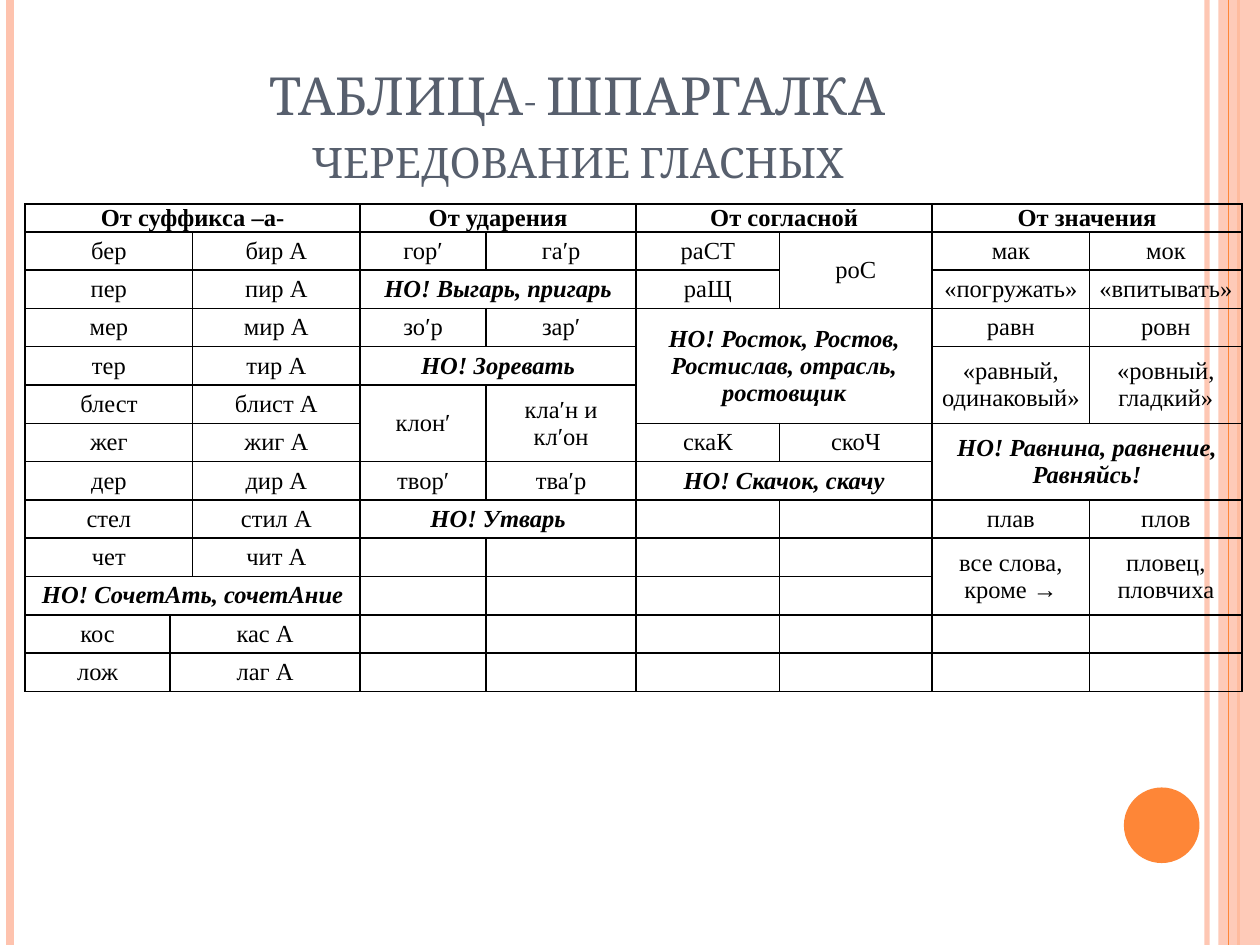
import copy

import pptx
import pptx.dml.color
import pptx.enum.shapes
import pptx.enum.text
import pptx.oxml
import pptx.oxml.ns
import pptx.util
from pptx.util import Inches

COLORS = {"peach": "FEC3AE", "orange": "FE8637", "slate": "575F6D", "black": "000000"}
SHAPES = pptx.enum.shapes.MSO_SHAPE
ANCHOR = pptx.enum.text.MSO_ANCHOR
CENTER = pptx.enum.text.PP_ALIGN.CENTER
qn = pptx.oxml.ns.qn

# "<" continues the cell on the left, "^" continues the cell above
LEFT, UP = "<", "^"
ALTERNATIONS = [
    ["От суффикса –а-", "<", "<", "От ударения", "<", "От согласной", "<", "От значения", "<"],
    ["бер", "<", "бир А", "гор′", "га′р", "раСТ", "роС", "мак", "мок"],
    ["пер", "<", "пир А", "НО! Выгарь, пригарь", "<", "раЩ", "^", "«погружать»", "«впитывать»"],
    ["мер", "<", "мир А", "зо′р", "зар′",
     "НО! Росток, Ростов, Ростислав, отрасль, ростовщик", "<", "равн", "ровн"],
    ["тер", "<", "тир А", "НО! Зоревать", "<", "^", "<",
     "«равный, одинаковый»", "«ровный, гладкий»"],
    ["блест", "<", "блист А", "клон′", "кла′н и кл′он", "^", "<", "^", "^"],
    ["жег", "<", "жиг А", "^", "^", "скаК", "скоЧ", "НО! Равнина, равнение, Равняйсь!", "<"],
    ["дер", "<", "дир А", "твор′", "тва′р", "НО! Скачок, скачу", "<", "^", "<"],
    ["стел", "<", "стил А", "НО! Утварь", "<", "", "", "плав", "плов"],
    ["чет", "<", "чит А", "", "", "", "", "все слова, кроме →", "пловец, пловчиха"],
    ["НО! СочетАть, сочетАние", "<", "<", "", "", "", "", "^", "^"],
    ["кос", "кас А", "<", "", "", "", "", "", ""],
    ["лож", "лаг А", "<", "", "", "", "", "", ""],
]
COLUMN_WIDTHS = [1.15, 0.14, 1.33, 1, 1.19, 1.14, 1.21, 1.25, 1.21]
HEADER_HEIGHT, TABLE_HEIGHT = 0.22, 3.87


def rgb(name):
    return pptx.dml.color.RGBColor.from_string(COLORS[name])


def set_opacity(shape, percent):
    for color in shape._element.spPr.iter(qn("a:srgbClr")):
        alpha = color.makeelement(qn("a:alpha"), {"val": str(percent * 1000)})
        color.append(alpha)


def span_length(cells, mark):
    """Count the first cell and the marks that follow it directly."""
    length = 1
    while length < len(cells) and cells[length] == mark:
        length += 1
    return length


class CheatSheet:
    heading_font, table_font = "Cambria", "Times New Roman"
    heading_size, table_size = 30, 14

    def __init__(self, presentation):
        self.slide = presentation.slides.add_slide(presentation.slide_layouts[5])

    def stripe(self, x, color, width, opacity=100):
        stripe = self.slide.shapes.add_connector(
            pptx.enum.shapes.MSO_CONNECTOR.STRAIGHT,
            Inches(x), Inches(0), Inches(x), Inches(7.5))
        stripe.line.color.rgb = rgb(color)
        stripe.line.width = pptx.util.Pt(width)
        spPr = stripe._element.spPr
        spPr.append(spPr.makeelement(qn("a:effectLst"), {}))
        if opacity < 100:
            set_opacity(stripe, opacity)

    def block(self, kind, x, y, width, height, color, opacity=100):
        block = self.slide.shapes.add_shape(
            kind, Inches(x), Inches(y), Inches(width), Inches(height))
        block.shadow.inherit = False
        block.fill.solid()
        block.fill.fore_color.rgb = rgb(color)
        block.line.fill.background()
        if opacity < 100:
            set_opacity(block, opacity)

    def heading(self, text, x, y, width, height):
        heading = self.slide.shapes.title
        heading.left, heading.top = Inches(x), Inches(y)
        heading.width, heading.height = Inches(width), Inches(height)
        frame = heading.text_frame
        frame.auto_size = pptx.enum.text.MSO_AUTO_SIZE.NONE
        frame.vertical_anchor = ANCHOR.BOTTOM
        paragraph = frame.paragraphs[0]
        paragraph.text = text
        paragraph.alignment = CENTER
        for run in paragraph.runs:
            self.format_run(run, self.heading_font, self.heading_size, "slate")
            run._r.get_or_add_rPr().set("cap", "small")
        # The line break takes the size of the text around it
        for line_break in paragraph._p.findall(qn("a:br")):
            line_break.insert(0, copy.deepcopy(paragraph.runs[0]._r.rPr))

    def format_run(self, run, font, size, color, bold=False, italic=False):
        run.font.name, run.font.size = font, pptx.util.Pt(size)
        run.font.color.rgb = rgb(color)
        run.font.bold, run.font.italic = bold, italic

    def format_cell(self, cell):
        cell.fill.background()
        cell.vertical_anchor = ANCHOR.MIDDLE
        cell.margin_left = cell.margin_right = Inches(0.07)
        cell.margin_top = cell.margin_bottom = 0
        properties = cell._tc.get_or_add_tcPr()
        for position, side in enumerate("LRTB"):
            properties.insert(position, pptx.oxml.parse_xml(
                f'<a:ln{side} {pptx.oxml.ns.nsdecls("a")} w="12700"><a:solidFill>'
                f'<a:srgbClr val="{COLORS["black"]}"/></a:solidFill></a:ln{side}>'))

    def write_cell(self, cell, text, is_header):
        paragraph = cell.text_frame.paragraphs[0]
        paragraph.text = text
        paragraph.alignment = CENTER
        is_exception = text.startswith("НО!")
        for run in paragraph.runs:
            self.format_run(run, self.table_font, self.table_size, "black",
                            is_header or is_exception, is_exception)
        paragraph._p.get_or_add_endParaRPr().set("sz", str(self.table_size * 100))

    def table(self, rows, x, y):
        table = self.slide.shapes.add_table(
            len(rows), len(COLUMN_WIDTHS), Inches(x), Inches(y),
            Inches(sum(COLUMN_WIDTHS)), Inches(TABLE_HEIGHT)).table
        table.first_row = table.horz_banding = False
        for column, width in zip(table.columns, COLUMN_WIDTHS):
            column.width = Inches(width)
        body_height = (TABLE_HEIGHT - HEADER_HEIGHT) / (len(rows) - 1)
        for index, table_row in enumerate(table.rows):
            table_row.height = Inches(body_height if index else HEADER_HEIGHT)
        for r, row in enumerate(rows):
            for c, text in enumerate(row):
                cell = table.cell(r, c)
                self.format_cell(cell)
                self.write_cell(cell, "" if text in (LEFT, UP) else text, r == 0)
                if text in (LEFT, UP):
                    continue
                across = span_length(row[c:], LEFT)
                down = span_length([line[c] for line in rows[r:]], UP)
                if across * down > 1:
                    cell.merge(table.cell(r + down - 1, c + across - 1))


def main():
    presentation = pptx.Presentation()
    presentation.slide_width, presentation.slide_height = Inches(10), Inches(7.5)
    sheet = CheatSheet(presentation)

    # Side stripes and the round accent
    sheet.stripe(9.58, "peach", 3, opacity=93)
    sheet.stripe(0.08, "peach", 4.5)
    sheet.stripe(9.83, "orange", 1.5)
    sheet.block(SHAPES.RECTANGLE, 9.67, 0, 0.33, 7.5, "peach", opacity=87)
    sheet.stripe(9.75, "orange", 0.75)
    sheet.block(SHAPES.OVAL, 8.92, 6.25, 0.6, 0.6, "orange")

    # Title and table of vowel alternations
    sheet.heading("ТАБЛИЦА- ШПАРГАЛКА\nчередование гласных", 0.5, 0.3, 8.17, 1.25)
    sheet.table(ALTERNATIONS, 0.2, 1.62)

    presentation.save("out.pptx")


if __name__ == "__main__":
    main()
